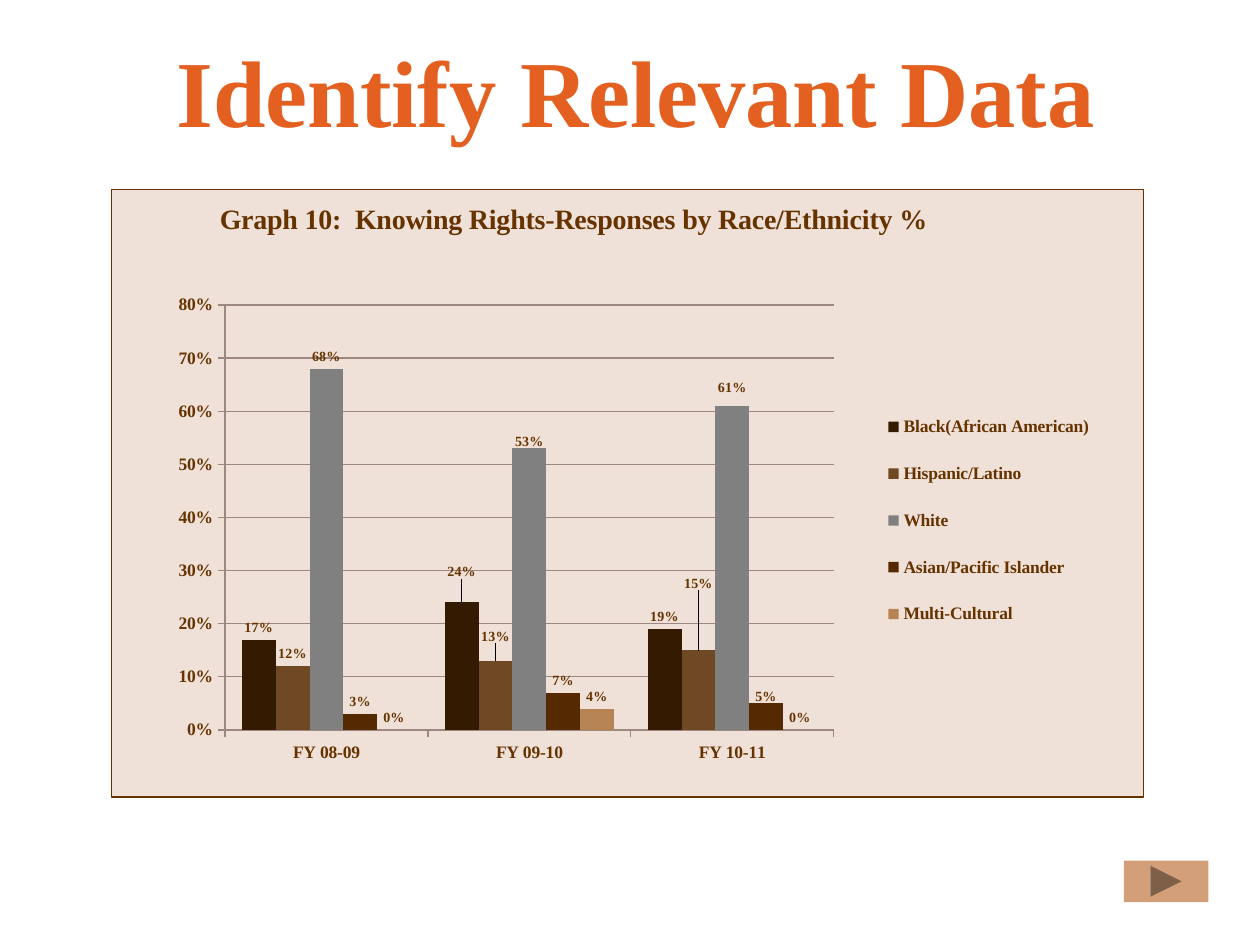
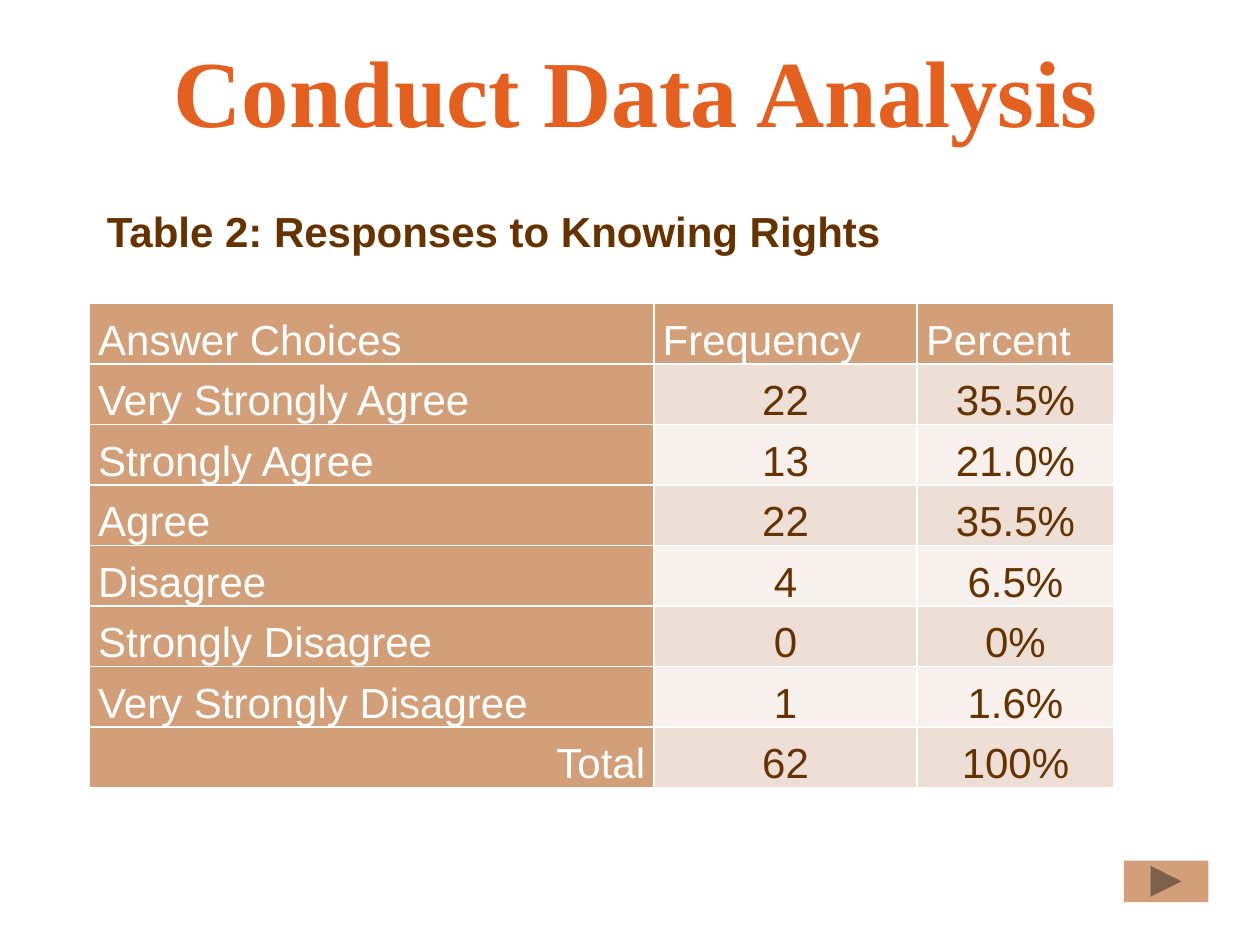
from lxml.etree import SubElement
from pptx import Presentation
from pptx.chart.data import CategoryChartData
from pptx.dml.color import RGBColor
from pptx.enum.chart import XL_CHART_TYPE as ChartType
from pptx.enum.chart import XL_LABEL_POSITION as LabelPosition
from pptx.enum.chart import XL_LEGEND_POSITION as LegendPosition
from pptx.enum.chart import XL_TICK_MARK as TickMark
from pptx.enum.shapes import MSO_SHAPE as ShapeType
from pptx.enum.text import MSO_ANCHOR as Anchor
from pptx.enum.text import PP_ALIGN as Align
from pptx.oxml import parse_xml
from pptx.oxml.ns import nsdecls, qn
from pptx.util import Pt

EMU_PER_PX = 9144

RACE_SHARES = (
    ("Black(African American)", (0.17, 0.24, 0.19), "331A00"),
    ("Hispanic/Latino", (0.12, 0.13, 0.15), "6E4924"),
    ("White", (0.68, 0.53, 0.61), "808080"),
    ("Asian/Pacific Islander", (0.03, 0.07, 0.05), "562A00"),
    ("Multi-Cultural", (0, 0.04, 0), "B68452"),
)
LABEL_SHIFTS = {(0, 1): -0.03, (1, 1): -0.02, (1, 2): -0.09,
                (2, 1): 0.01, (2, 2): -0.01, (3, 2): 0.01}
RESPONSES = (
    ("Answer Choices", "Frequency", "Percent"),
    ("Very Strongly Agree", "22", "35.5%"),
    ("Strongly Agree", "13", "21.0%"),
    ("Agree", "22", "35.5%"),
    ("Disagree", "4", "6.5%"),
    ("Strongly Disagree", "0", "0%"),
    ("Very Strongly Disagree", "1", "1.6%"),
    ("Total", "62", "100%"),
)


def px(length):
    return int(length * EMU_PER_PX)


def rgb(value):
    return RGBColor.from_string(value)


def paint(element, color):
    element.fill.solid()
    element.fill.fore_color.rgb = rgb(color)


def set_font(font, size, color, name, bold=False):
    font.size = Pt(size)
    font.name = name
    font.bold = bold
    font.color.rgb = rgb(color)


def write(text_frame, text, size, color, name, bold=False, align=Align.LEFT):
    paragraph = text_frame.paragraphs[0]
    paragraph.alignment = align
    run = paragraph.add_run()
    run.text = text
    set_font(run.font, size, color, name, bold)


def place(parent, after=None, target=None, mode="edge", **fractions):
    for old in parent.findall(qn("c:layout")):
        parent.remove(old)
    layout = parse_xml(f'<c:layout {nsdecls("c")}><c:manualLayout/></c:layout>')
    manual = layout[0]
    settings = {"layoutTarget": target} if target else {}
    settings |= {"xMode": mode, "yMode": mode} | fractions
    for tag, value in settings.items():
        SubElement(manual, qn(f"c:{tag}")).set("val", str(value))
    if after:
        parent.find(qn(after)).addnext(layout)
    else:
        parent.insert(0, layout)


class Deck:
    serif = "Times New Roman"
    sans = "Arial"
    orange = "E36021"
    brown = "663300"
    tan = "D29F78"
    white = "FFFFFF"
    chart_back = "EFE1D8"
    axis = "9C8880"
    bands = ("EEDFD6", "F7F0EC")

    def __init__(self):
        self.presentation = Presentation()
        self.presentation.slide_width = px(1000)
        self.presentation.slide_height = px(750)
        self.slide = None

    def new_slide(self, title):
        layout = self.presentation.slide_layouts[6]
        self.slide = self.presentation.slides.add_slide(layout)
        self.next_button()
        self.text(title, (42, 17, 925, 108), anchor=Anchor.MIDDLE, size=54,
                  color=self.orange, name=self.serif, bold=True, align=Align.CENTER)

    def next_button(self):
        shape = self.slide.shapes.add_shape(
            ShapeType.ACTION_BUTTON_FORWARD_OR_NEXT, *map(px, (892, 683, 67, 33)))
        shape.shadow.inherit = False
        paint(shape, self.tan)
        shape.line.fill.background()

    def text(self, text, box, anchor=Anchor.TOP, **style):
        text_frame = self.slide.shapes.add_textbox(*map(px, box)).text_frame
        text_frame.word_wrap = True
        text_frame.vertical_anchor = anchor
        write(text_frame, text, **style)

    def column_chart(self, title, categories, rows, box, label_shifts):
        data = CategoryChartData(number_format="0%")
        data.categories = categories
        for name, values, _ in rows:
            data.add_series(name, values)
        chart = self.slide.shapes.add_chart(
            ChartType.COLUMN_CLUSTERED, *map(px, box), data).chart
        set_font(chart.font, 10, self.brown, self.serif, True)
        write(chart.chart_title.text_frame, title, size=16, color=self.brown,
              name=self.serif, bold=True, align=Align.CENTER)
        place(chart.element.xpath("./c:chart/c:title")[0], "c:tx", x=0.1, y=0.01)
        place(chart.element.xpath(".//c:plotArea")[0], target="inner",
              x=0.11, y=0.19, w=0.59, h=0.7)
        self.chart_frame(chart)
        self.legend(chart)
        self.axes(chart)

        plot = chart.plots[0]
        plot.gap_width = 100
        plot.overlap = 0
        plot.vary_by_categories = False
        for series, (_, _, color) in zip(plot.series, rows):
            paint(series.format, color)
            labels = series.data_labels
            labels.show_value = True
            labels.number_format = "0%"
            labels.number_format_is_linked = False
            labels.position = LabelPosition.OUTSIDE_END
            set_font(labels.font, 8, self.brown, self.serif, True)
        for (row, column), shift in label_shifts.items():
            label = plot.series[row].points[column].data_label
            set_font(label.font, 8, self.brown, self.serif, True)
            label.position = LabelPosition.OUTSIDE_END
            element = chart.element.xpath(
                f".//c:ser[{row + 1}]//c:dLbl[c:idx/@val='{column}']")[0]
            place(element, "c:idx", mode="factor", x=0, y=shift)

    def chart_frame(self, chart):
        frame = parse_xml(
            f'<c:spPr {nsdecls("c", "a")}>'
            f'<a:solidFill><a:srgbClr val="{self.chart_back}"/></a:solidFill>'
            f'<a:ln w="{Pt(0.75)}"><a:solidFill><a:srgbClr val="{self.brown}"/>'
            '</a:solidFill></a:ln></c:spPr>')
        chart.element.find(qn("c:txPr")).addprevious(frame)

    def legend(self, chart):
        chart.has_legend = True
        chart.legend.position = LegendPosition.RIGHT
        chart.legend.include_in_layout = False
        set_font(chart.legend.font, 10, self.brown, self.serif, True)
        place(chart.element.xpath(".//c:legend")[0], "c:legendPos",
              x=0.74, y=0.33, w=0.22, h=0.43)

    def axes(self, chart):
        value_axis = chart.value_axis
        value_axis.minimum_scale, value_axis.maximum_scale = 0, 0.8
        value_axis.major_unit = 0.1
        value_axis.tick_labels.number_format = "0%"
        value_axis.tick_labels.number_format_is_linked = False
        value_axis.has_major_gridlines = True
        lines = [value_axis.major_gridlines.format.line]
        for axis in (value_axis, chart.category_axis):
            axis.major_tick_mark = TickMark.OUTSIDE
            set_font(axis.tick_labels.font, 10, self.brown, self.serif, True)
            lines.append(axis.format.line)
        for line in lines:
            line.color.rgb = rgb(self.axis)
            line.width = Pt(0.75)

    def table(self, rows, corner, widths, row_height):
        size = (sum(widths), row_height * len(rows))
        table = self.slide.shapes.add_table(
            len(rows), len(widths), *map(px, corner + size)).table
        for column, width in zip(table.columns, widths):
            column.width = px(width)
        for r, row in enumerate(rows):
            table.rows[r].height = px(row_height)
            for c, text in enumerate(row):
                heading = r == 0 or c == 0
                align = Align.LEFT if heading else Align.CENTER
                if text == "Total":
                    align = Align.RIGHT
                fill = self.tan if heading else self.bands[(r - 1) % 2]
                color = self.white if heading else self.brown
                self.cell(table.cell(r, c), text, fill, color, align)

    def cell(self, cell, text, fill, color, align):
        cell.margin_left = cell.margin_right = px(7)
        cell.margin_top = cell.margin_bottom = 0
        cell.vertical_anchor = Anchor.BOTTOM
        write(cell.text_frame, text, size=24, color=color, name=self.sans, align=align)
        paint(cell, fill)
        properties = cell.text_frame._txBody.getparent().find(qn("a:tcPr"))
        for position, side in enumerate(("lnL", "lnR", "lnT", "lnB")):
            properties.insert(position, parse_xml(
                f'<a:{side} {nsdecls("a")} w="{Pt(1)}"><a:solidFill>'
                f'<a:srgbClr val="{self.white}"/></a:solidFill></a:{side}>'))


def main():
    deck = Deck()

    deck.new_slide("Identify Relevant Data")
    deck.column_chart("Graph 10:  Knowing Rights-Responses by Race/Ethnicity %",
                      ("FY 08-09", "FY 09-10", "FY 10-11"), RACE_SHARES,
                      (88, 150, 820, 483), LABEL_SHIFTS)

    deck.new_slide("Conduct Data Analysis")
    deck.text("Table 2: Responses to Knowing Rights", (75, 158, 808, 51),
              size=24, color=deck.brown, name=deck.sans, bold=True)
    deck.table(RESPONSES, (71, 241), (448, 209, 156), 48)

    deck.presentation.save("out.pptx")


if __name__ == "__main__":
    main()
